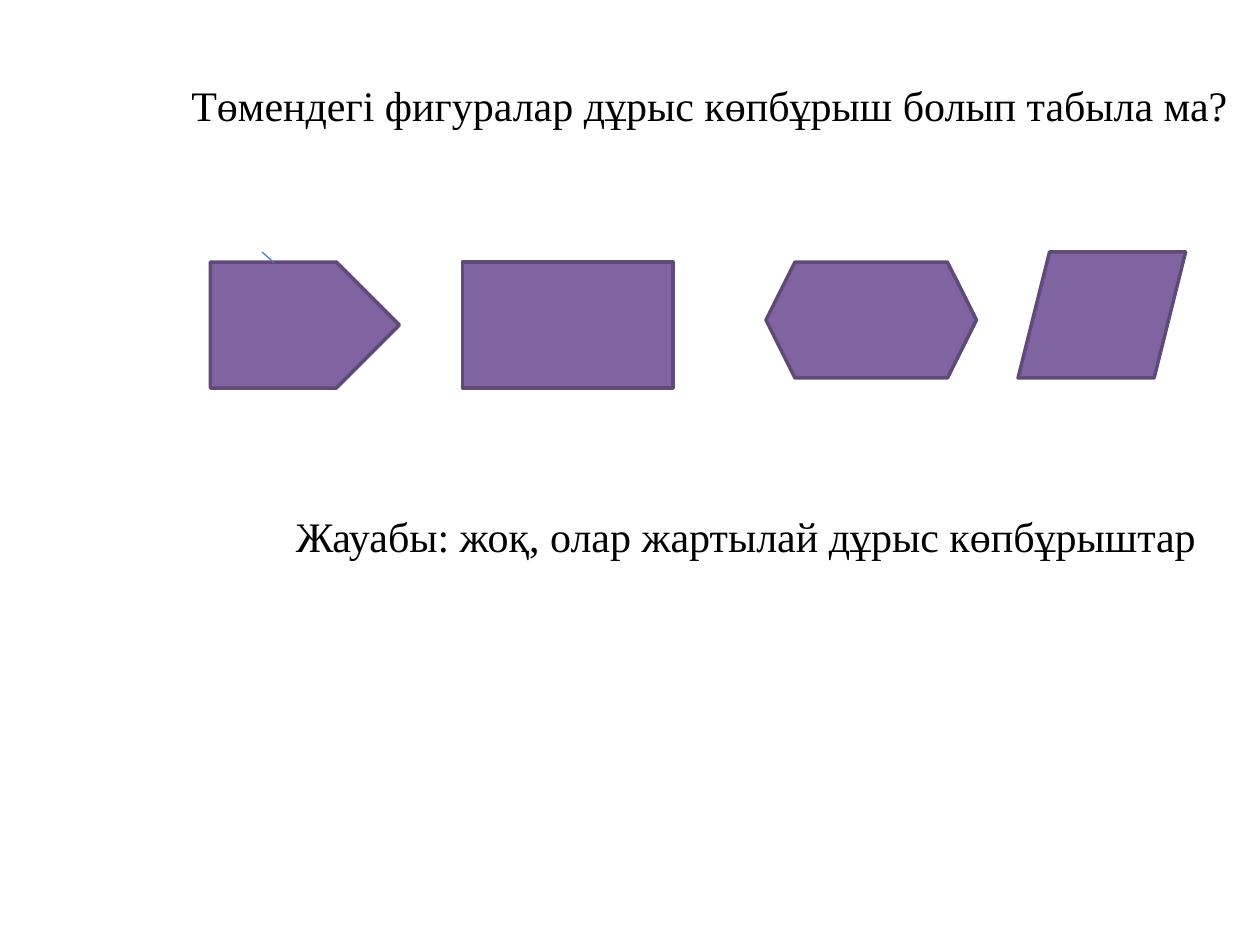
from typing import NamedTuple

from lxml import etree
from pptx import Presentation
from pptx.dml.color import RGBColor
from pptx.enum.shapes import MSO_CONNECTOR, MSO_SHAPE
from pptx.enum.text import MSO_AUTO_SIZE
from pptx.oxml.ns import qn
from pptx.util import Inches, Pt

PENTAGON = MSO_SHAPE.PENTAGON
RECTANGLE = MSO_SHAPE.RECTANGLE
HEXAGON = MSO_SHAPE.HEXAGON
PARALLELOGRAM = MSO_SHAPE.PARALLELOGRAM
STRAIGHT = MSO_CONNECTOR.STRAIGHT
FIT_SHAPE = MSO_AUTO_SIZE.SHAPE_TO_FIT_TEXT

FONT = "Times New Roman"
BLACK = "000000"
PURPLE = "8064A2"
DARK_PURPLE = "5F4A78"
BLUE = "4B7EBC"


class Polygon(NamedTuple):
    kind: MSO_SHAPE
    left: float
    top: float
    width: float
    height: float


class Stroke(NamedTuple):
    start_x: float
    start_y: float
    end_x: float
    end_y: float


POLYGONS = [
    Polygon(PENTAGON, 1.67, 2.08, 1.5, 1),
    Polygon(RECTANGLE, 3.67, 2.08, 1.67, 1),
    Polygon(HEXAGON, 6.08, 2.08, 1.67, 0.92),
    Polygon(PARALLELOGRAM, 8.08, 2, 1.33, 1),
]

STROKES = [
    Stroke(2.17, 2.09, 2.17, 2.08),
    Stroke(2.08, 2, 2.17, 2.08),
]


def color(value: str) -> RGBColor:
    return RGBColor.from_string(value)


def add_text(page, text: str, *, left: float, top: float, width: float,
             height: float = 0.5, size: float = 24, ink: str = BLACK) -> None:
    box = page.shapes.add_textbox(
        Inches(left), Inches(top), Inches(width), Inches(height))
    frame = box.text_frame
    frame.word_wrap = True
    frame.auto_size = FIT_SHAPE
    span = frame.paragraphs[0].add_run()
    span.text = text
    span.font.name = FONT
    span.font.size = Pt(size)
    span.font.color.rgb = color(ink)


def add_polygon(page, polygon: Polygon) -> None:
    shape = page.shapes.add_shape(
        polygon.kind, Inches(polygon.left), Inches(polygon.top),
        Inches(polygon.width), Inches(polygon.height))
    shape.shadow.inherit = False
    shape.fill.solid()
    shape.fill.fore_color.rgb = color(PURPLE)
    shape.line.color.rgb = color(DARK_PURPLE)
    shape.line.width = Pt(2)


def add_stroke(page, stroke: Stroke) -> None:
    connector = page.shapes.add_connector(
        STRAIGHT, Inches(stroke.start_x), Inches(stroke.start_y),
        Inches(stroke.end_x), Inches(stroke.end_y))
    connector.line.color.rgb = color(BLUE)
    connector.line.width = Pt(0.75)
    etree.SubElement(connector.element.spPr, qn("a:effectLst"))


def main() -> None:
    deck = Presentation()
    deck.slide_width = Inches(10)
    deck.slide_height = Inches(7.5)
    page = deck.slides.add_slide(deck.slide_layouts[6])

    add_text(page, "Төмендегі фигуралар дұрыс көпбұрыш болып табыла ма?",
             left=1.42, top=0.58, width=8.58)
    for polygon in POLYGONS:
        add_polygon(page, polygon)
    add_text(page, "Жауабы: жоқ, олар жартылай дұрыс көпбұрыштар",
             left=2.25, top=4, width=7.75)
    for stroke in STROKES:
        add_stroke(page, stroke)

    deck.save("out.pptx")


if __name__ == "__main__":
    main()
